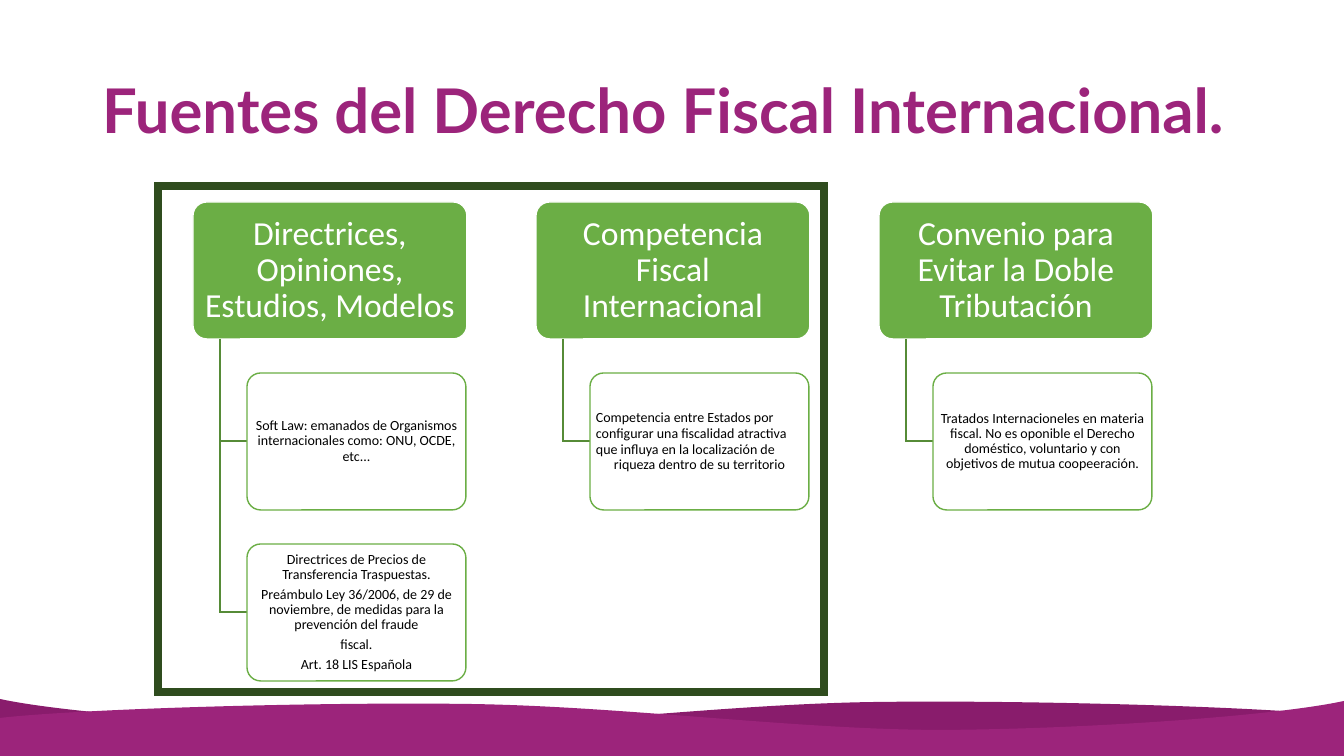
from lxml import etree
from pptx import Presentation
from pptx.dml.color import RGBColor
from pptx.enum.shapes import MSO_SHAPE
from pptx.enum.text import MSO_ANCHOR, PP_ALIGN
from pptx.oxml.ns import qn
from pptx.util import Pt

PX = 914400 / 100.8
WIDTH, HEIGHT = 1344, 756
ROUNDED, RECTANGLE = MSO_SHAPE.ROUNDED_RECTANGLE, MSO_SHAPE.RECTANGLE
MIDDLE = MSO_ANCHOR.MIDDLE
LEFT, CENTER, JUSTIFY = PP_ALIGN.LEFT, PP_ALIGN.CENTER, PP_ALIGN.JUSTIFY

PURPLE, DARK_PURPLE = "9C247B", "891C6C"
GREEN, MID_GREEN, DARK_GREEN = "6BAE45", "568B37", "2F4C1E"
WHITE, BLACK = "FFFFFF", "000000"

COLUMN_PITCH, ROW_PITCH = 343, 171
BOX_HEIGHT = 137
HEADER_WIDTH, DETAIL_WIDTH = 274, 219
TRUNK_INDENT, DETAIL_INDENT = 27, 54

COLUMNS = [
    ("Directrices, Opiniones, Estudios, Modelos", [
        [("Soft Law: emanados de Organismos internacionales como: ONU, OCDE, etc...", {})],
        [("Directrices de Precios de Transferencia Traspuestas.", {}),
         ("Preámbulo Ley 36/2006, de 29 de noviembre, de medidas para la prevención del fraude", {}),
         ("fiscal.", {}),
         ("Art. 18 LIS Española", {})],
    ]),
    ("Competencia Fiscal Internacional", [
        [(line, {"align": LEFT, "spacing": 0.95, "after": 0}) for line in (
            "Competencia entre Estados por",
            "configurar una fiscalidad atractiva",
            "que influya en la localización de")]
        + [("riqueza dentro de su territorio", {})],
    ]),
    ("Convenio para Evitar la Doble Tributación", [
        [("Tratados Internacioneles en materia fiscal. No es oponible el Derecho "
          "doméstico, voluntario y con objetivos de mutua coopeeración.", {})],
    ]),
]


def px(length):
    return round(length * PX)


def color(code):
    return RGBColor.from_string(code)


def write(para, text, size=10, font="Calibri", ink=BLACK, bold=False,
          align=CENTER, spacing=0.9, after=3.5):
    para.alignment = align
    para.line_spacing = spacing
    para.space_before = Pt(0)
    para.space_after = Pt(after)
    span = para.add_run()
    span.text = text
    span.font.size = Pt(size)
    span.font.name = font
    span.font.bold = bold
    span.font.color.rgb = color(ink)


def paint(shape, fill=None, line=None, weight=1):
    shape.shadow.inherit = False
    if fill:
        shape.fill.solid()
        shape.fill.fore_color.rgb = color(fill)
    else:
        shape.fill.background()
    if line:
        shape.line.color.rgb = color(line)
        shape.line.width = Pt(weight)
        outline = shape._element.spPr.find(qn("a:ln"))
        etree.SubElement(outline, qn("a:miter"), lim="800000")
    else:
        shape.line.fill.background()


def add_outline(page, points, closed, **look):
    builder = page.shapes.build_freeform(*points[0], scale=PX)
    builder.add_line_segments(points[1:], close=closed)
    shape = builder.convert_to_shape()
    paint(shape, **look)
    return shape


def add_box(page, kind, left, top, width, height, **look):
    box = page.shapes.add_shape(kind, px(left), px(top), px(width), px(height))
    paint(box, **look)
    return box


def add_text_box(page, left, top, width, paragraphs, inset, **look):
    box = add_box(page, ROUNDED, left, top, width, BOX_HEIGHT, **look)
    box.adjustments[0] = 0.1
    frame = box.text_frame
    frame.word_wrap = True
    frame.vertical_anchor = MIDDLE
    frame.margin_left = frame.margin_right = px(inset)
    frame.margin_top = frame.margin_bottom = px(1)
    for index, (text, style) in enumerate(paragraphs):
        para = frame.add_paragraph() if index else frame.paragraphs[0]
        write(para, text, **style)


def add_wave(page, knots, corners, fill):
    wave = add_outline(page, knots + corners, True, fill=fill)
    segments = list(wave._element.iter(qn("a:lnTo")))[:len(knots) - 1]
    for start in range(0, len(segments), 3):
        curve = segments[start]
        curve.tag = qn("a:cubicBezTo")
        for segment in segments[start + 1:start + 3]:
            curve.append(segment[0])
            segment.getparent().remove(segment)


def add_waves(page):
    crest = [(1344, 716), (1266, 707), (1034, 700), (877, 702), (721, 704),
             (547, 728), (401, 728), (255, 727), (69, 714), (0, 699)]
    mirrored = [(WIDTH - x, y + 2) for x, y in crest]
    bottom = [(0, HEIGHT), (WIDTH, HEIGHT)]
    add_wave(page, crest, bottom, DARK_PURPLE)
    add_wave(page, mirrored, bottom[::-1], PURPLE)


def add_title(page, left, top, width, height):
    title = page.shapes.title
    title.left, title.top, title.width, title.height = map(px, (left, top, width, height))
    title.text_frame.vertical_anchor = MIDDLE
    title.text_frame.word_wrap = True
    write(title.text_frame.paragraphs[0], "Fuentes del Derecho Fiscal Internacional.",
          size=44, font="Lato", ink=PURPLE, bold=True, align=JUSTIFY, after=0)


def add_column(page, left, top, heading, details):
    add_text_box(page, left, top, HEADER_WIDTH, [(heading, {"size": 24, "ink": WHITE})],
                 inset=5, fill=GREEN, line=WHITE)
    trunk, branch = left + TRUNK_INDENT, left + DETAIL_INDENT
    for row, paragraphs in enumerate(details, start=1):
        detail_top = top + row * ROW_PITCH
        middle = detail_top + BOX_HEIGHT // 2
        add_outline(page, [(trunk, top + BOX_HEIGHT), (trunk, middle), (branch, middle)],
                    False, line=MID_GREEN)
        add_text_box(page, branch, detail_top, DETAIL_WIDTH, paragraphs,
                     inset=2, fill=WHITE, line=GREEN)


def add_hierarchy(page, left, top):
    for index, (heading, details) in enumerate(COLUMNS):
        add_column(page, left + index * COLUMN_PITCH, top, heading, details)


def main():
    deck = Presentation()
    deck.slide_width, deck.slide_height = px(WIDTH), px(HEIGHT)
    page = deck.slides.add_slide(deck.slide_layouts[5])
    add_waves(page)
    add_title(page, 92, 41, 1160, 146)
    add_hierarchy(page, 193, 202)
    add_box(page, RECTANGLE, 158, 186, 666, 506, line=DARK_GREEN, weight=6)
    deck.save("out.pptx")


if __name__ == "__main__":
    main()
